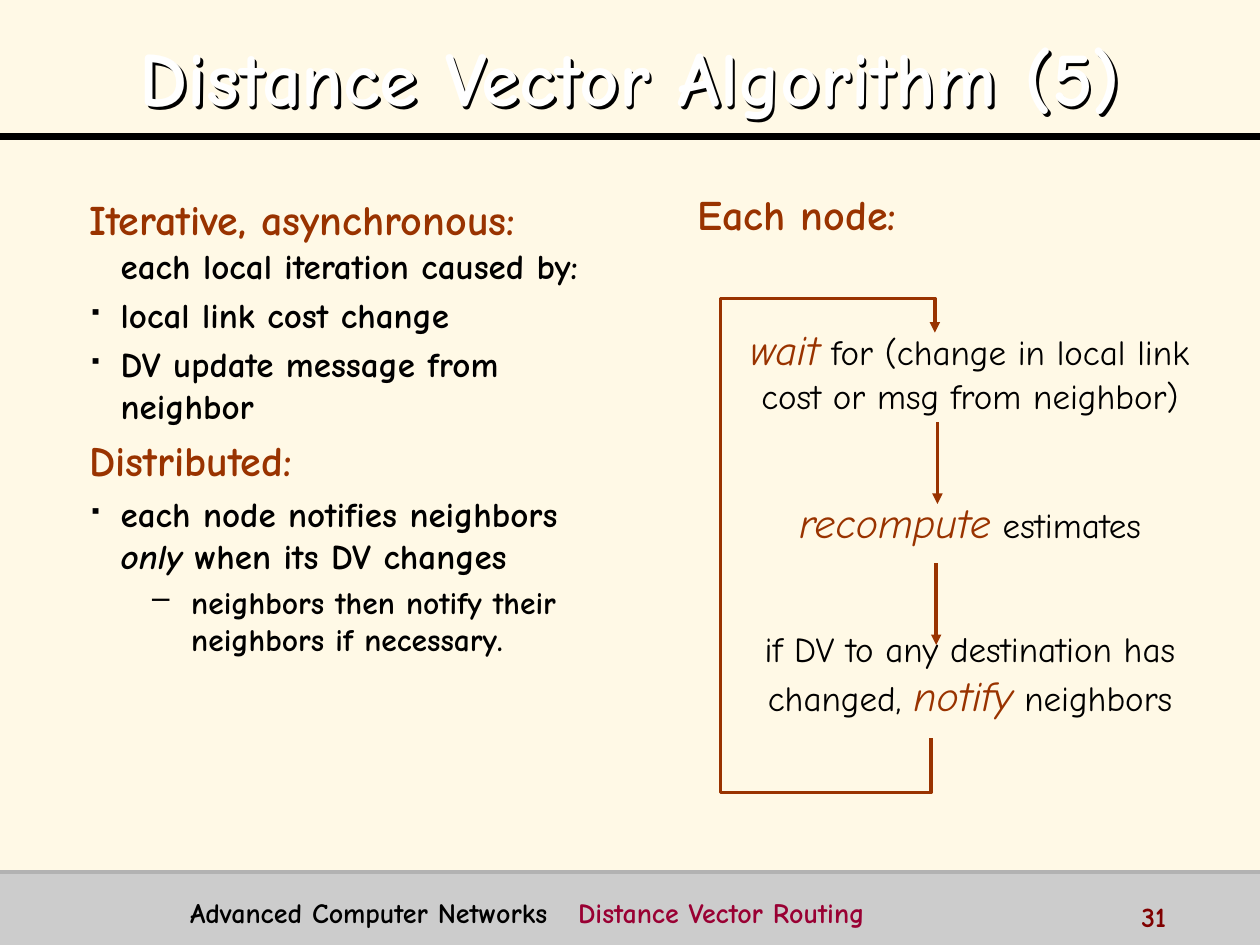
import pptx
import pptx.dml.color
import pptx.enum.shapes
import pptx.enum.text
import pptx.oxml
import pptx.oxml.ns
import pptx.util
from lxml import etree
from pptx.util import Inches

FONT = "Comic Neue"
COLOURS = {
    "page": "FFF9E6", "band": "CCCCCC", "edge": "B2B2B2", "text": "000000",
    "accent": "993300", "topic": "990033", "number": "800000", "title": "FFFFFF",
}
ALIGN = pptx.enum.text.PP_ALIGN


def colour(name):
    return pptx.dml.color.RGBColor.from_string(COLOURS[name])


def add_element(parent, tag, **attributes):
    element = etree.SubElement(parent, pptx.oxml.ns.qn(tag))
    for name, value in attributes.items():
        element.set(name, value)
    return element


def set_font(font, size, name, bold=None, italic=None):
    font.name = FONT
    font.size = pptx.util.Pt(size)
    font.color.rgb = colour(name)
    font.bold = bold
    font.italic = italic


def add_box(page, left, top, width, height):
    box = page.shapes.add_textbox(Inches(left), Inches(top), Inches(width), Inches(height))
    box.text_frame.word_wrap = True
    return box


def fill_para(para, spans, bold=False):
    if len(spans) == 1:
        text, size, name, italic = spans[0]
        set_font(para.font, size, name, bold, italic)
        para.add_run().text = text
        return
    for text, size, name, italic in spans:
        span = para.add_run()
        span.text = text
        set_font(span.font, size, name, bold, italic)


def add_label(page, left, top, width, height, text, size, name, align=ALIGN.LEFT):
    box = add_box(page, left, top, width, height)
    para = box.text_frame.paragraphs[0]
    para.alignment = align
    fill_para(para, [(text, size, name, False)], bold=True)
    return box


def add_line(page, start, end, name, weight):
    line = page.shapes.add_connector(
        pptx.enum.shapes.MSO_CONNECTOR.STRAIGHT, *map(Inches, start + end))
    line.line.color.rgb = colour(name)
    line.line.width = pptx.util.Pt(weight)
    add_element(line._element.spPr, "a:effectLst")
    return line


def add_arrowhead(shape):
    add_element(shape.line._get_or_add_ln(), "a:tailEnd", type="triangle")


def add_title(page, left, top, width, height):
    box = add_label(page, left, top, width, height,
                    "Distance Vector Algorithm (5)", 44, "title", ALIGN.CENTER)
    box.text_frame.vertical_anchor = pptx.enum.text.MSO_ANCHOR.MIDDLE
    box.text_frame.paragraphs[0].line_spacing = 1.1
    effects = add_element(box._element.spPr, "a:effectLst")
    shadow = add_element(effects, "a:outerShdw", blurRad="0", dist=str(Inches(0.03)),
                         dir="2700000", algn="ctr", rotWithShape="0")
    add_element(shadow, "a:srgbClr", val=COLOURS["text"])
    add_line(page, (0, 1.08), (10, 1.08), "text", 4)


def add_footer(page, left, top, width, height):
    band = page.shapes.add_shape(
        pptx.enum.shapes.MSO_SHAPE.RECTANGLE,
        Inches(left), Inches(top), Inches(width), Inches(height))
    band.shadow.inherit = False
    band.fill.solid()
    band.fill.fore_color.rgb = colour("band")
    band.line.fill.background()
    add_line(page, (left, top), (left + width, top), "edge", 2)
    box = add_box(page, left + 1.41, top + 0.14, 7.28, 0.31)
    para = box.text_frame.paragraphs[0]
    tabs = add_element(para._p.get_or_add_pPr(), "a:tabLst")
    add_element(tabs, "a:tab", pos=str(Inches(3.08)), algn="l")
    fill_para(para, [("Advanced Computer Networks\t", 16, "text", False),
                     ("Distance Vector Routing", 16, "topic", False)], bold=True)
    add_label(page, left + 8.96, top + 0.17, 1, 0.25, "31", 16, "number")


def add_notes_column(page, left, top, width, height):
    items = [
        (None, [("Iterative, asynchronous: ", 24, "accent", False),
                ("each local iteration caused by:", 20, "text", False)]),
        ("▪", [("local link cost change", 20, "text", False)]),
        ("▪", [("DV update message from neighbor", 20, "text", False)]),
        (None, [("Distributed:", 24, "accent", False)]),
        ("▪", [("each node notifies neighbors ", 20, "text", False),
               ("only", 20, "text", True),
               (" when its DV changes", 20, "text", False)]),
        ("–", [("neighbors then notify their neighbors if necessary.", 18, "text", False)]),
    ]
    frame = add_box(page, left, top, width, height).text_frame
    for index, (bullet, spans) in enumerate(items):
        para = frame.add_paragraph() if index else frame.paragraphs[0]
        margin, hang = (0.81, 0.31) if bullet == "–" else (0.25, 0.25)
        para.level = 1 if bullet == "–" else 0
        properties = para._p.get_or_add_pPr()
        properties.set("marL", str(Inches(margin)))
        properties.set("indent", str(-Inches(hang)))
        if index:
            para.space_before = pptx.util.Pt(0.2 * spans[0][1])
        if bullet:
            tint = add_element(properties, "a:buClr")
            add_element(tint, "a:srgbClr", val=COLOURS["text"])
            if bullet == "▪":
                add_element(properties, "a:buSzPct", val="50000")
            add_element(properties, "a:buChar", char=bullet)
        else:
            add_element(properties, "a:buNone")
        fill_para(para, spans, bold=True)


def add_node_cycle(page, left, top, width):
    steps = [
        (1.12, 0.72, [("wait", 24, "accent", True),
                      (" for (change in local link cost or msg from neighbor)", 20, "text", False)]),
        (2.49, 0.4, [("recompute", 24, "accent", True), (" estimates", 20, "text", False)]),
        (3.53, 0.72, [("if DV to any destination has changed, ", 20, "text", False),
                      ("notify", 24, "accent", True), (" neighbors", 20, "text", False)]),
    ]
    add_label(page, left - 0.71, top, 2.81, 0.5, "Each node:", 24, "accent", ALIGN.CENTER)
    for offset, height, spans in steps:
        frame = add_box(page, left, top + offset, width, height).text_frame
        frame.margin_top = frame.margin_bottom = 0
        frame.paragraphs[0].alignment = ALIGN.CENTER
        fill_para(frame.paragraphs[0], spans)
    for x, y in [(1.81, 1.9), (1.8, 3.02)]:
        arrow = add_line(page, (left + x, top + y), (left + x, top + y + 0.65), "accent", 2)
        add_arrowhead(arrow)
    corners = [(1.76, 4.41), (1.76, 4.84), (0.09, 4.84), (0.09, 0.92), (1.79, 0.92), (1.79, 1.19)]
    points = [(Inches(left + x), Inches(top + y)) for x, y in corners]
    builder = page.shapes.build_freeform(*points[0])
    builder.add_line_segments(points[1:], close=False)
    loop = builder.convert_to_shape()
    loop.shadow.inherit = False
    loop.fill.background()
    loop.line.color.rgb = colour("accent")
    loop.line.width = pptx.util.Pt(2)
    add_arrowhead(loop)


def main():
    deck = pptx.Presentation()
    deck.slide_width, deck.slide_height = Inches(10), Inches(7.5)
    page = deck.slides.add_slide(deck.slide_layouts[6])
    page.background.fill.solid()
    page.background.fill.fore_color.rgb = colour("page")
    add_footer(page, 0, 6.92, 10, 0.58)
    add_notes_column(page, 0.61, 1.49, 4.14, 5.08)
    add_node_cycle(page, 5.63, 1.45, 4.14)
    add_title(page, 0.2, 0.13, 9.61, 0.87)
    deck.save("out.pptx")


if __name__ == "__main__":
    main()
